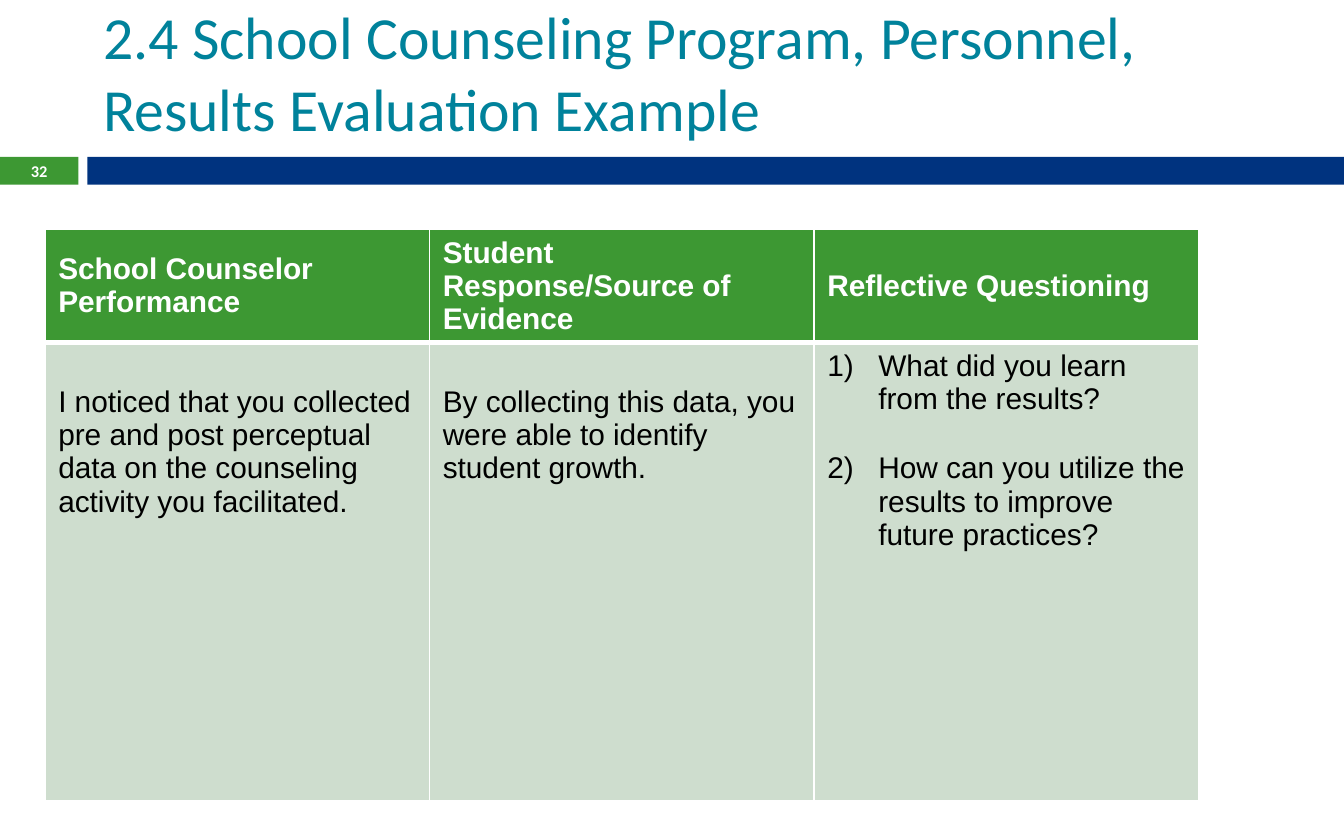
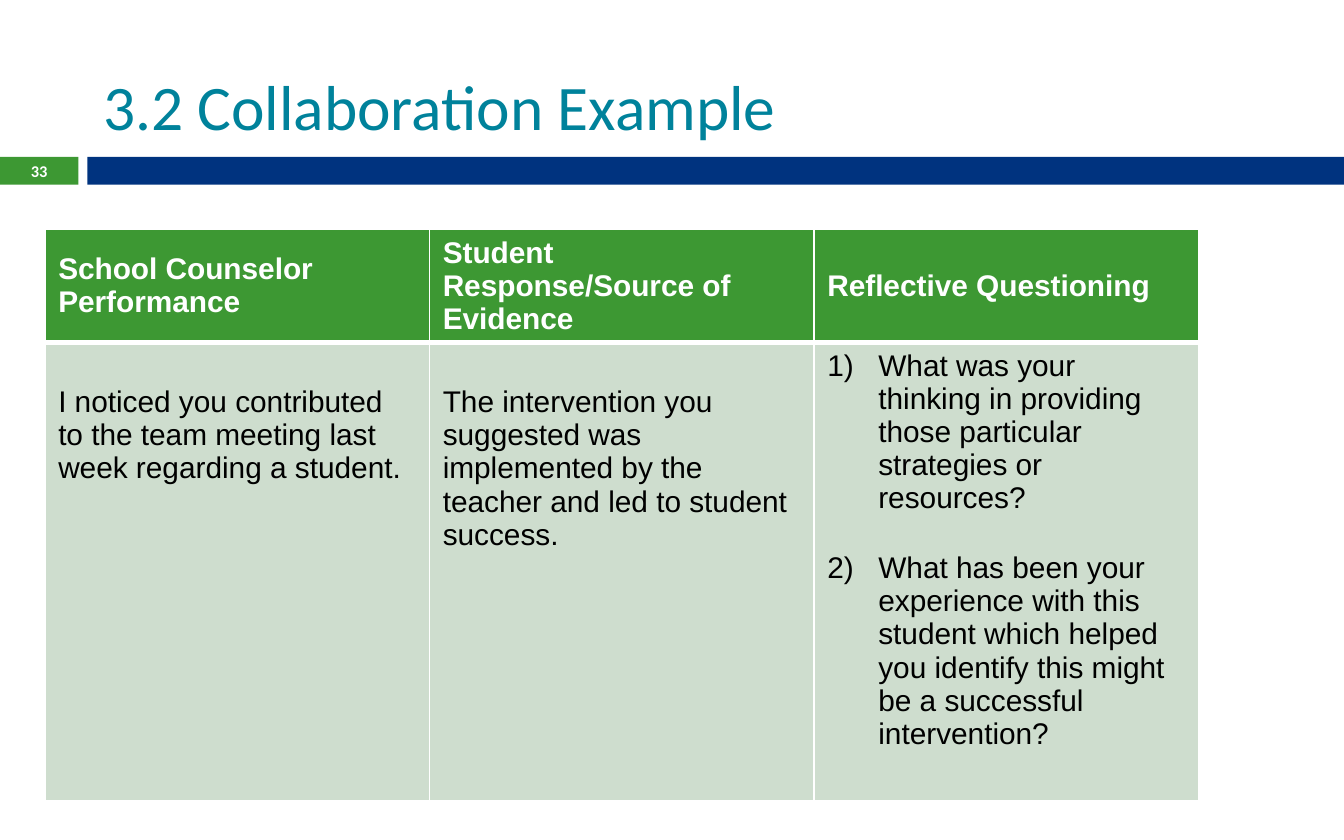
from dataclasses import dataclass
from typing import NamedTuple

from lxml import etree
from pptx import Presentation
from pptx.dml.color import RGBColor
from pptx.enum.shapes import MSO_SHAPE
from pptx.enum.text import MSO_ANCHOR, MSO_AUTO_SIZE, PP_ALIGN
from pptx.oxml.ns import qn
from pptx.util import Emu, Inches, Pt

RECT = MSO_SHAPE.RECTANGLE
LEFT, CENTER = PP_ALIGN.LEFT, PP_ALIGN.CENTER
TOP, MIDDLE, BOTTOM = MSO_ANCHOR.TOP, MSO_ANCHOR.MIDDLE, MSO_ANCHOR.BOTTOM
NO_FIT = MSO_AUTO_SIZE.NONE
TITLE_ONLY = 5

WIDTH, HEIGHT = Inches(10), Inches(6.25)
COLS, ROWS = 120, 75


@dataclass(frozen=True)
class Theme:
    green: str = "3D9833"
    navy: str = "00337F"
    teal: str = "00829B"
    pale: str = "CEDDCE"
    white: str = "FFFFFF"
    black: str = "000000"
    head: str = "Calibri"
    body: str = "Arial"
    cell: float = 16
    number: float = 8.8
    gap: float = 19.5
    thin: float = 1
    thick: float = 3


THEME = Theme()


class Box(NamedTuple):
    """A place on the grid, in columns and rows."""
    col: float
    row: float
    wide: float
    high: float

    def place(self) -> tuple[Emu, Emu, Emu, Emu]:
        return across(self.col), down(self.row), across(self.wide), down(self.high)


class Band(NamedTuple):
    box: Box
    fill: str


class Example(NamedTuple):
    number: int
    title: str
    size: float
    noticed: str
    evidence: str
    questions: tuple[str, ...]


TITLE = Box(8, 2.6, 107, 10.8)
TAB = Box(0, 14, 7, 2.6)
BANDS = (
    Band(Box(0, 14, 7, 2.5), THEME.green),
    Band(Box(7.8, 14, 112.2, 2.5), THEME.navy),
)
TABLE = Box(4, 20.5, 103, 47.9)
HEAD_ROW = 7
HEADS = (
    "School Counselor Performance",
    "Student Response/Source of Evidence",
    "Reflective Questioning",
)
EXAMPLES = (
    Example(
        32, "2.4 School Counseling Program, Personnel, Results Evaluation Example", 32,
        "I noticed that you collected pre and post perceptual data on the "
        "counseling activity you facilitated.",
        "By collecting this data, you were able to identify student growth.",
        ("What did you learn from the results?",
         "How can you utilize the results to improve future practices?"),
    ),
    Example(
        33, "3.2 Collaboration Example", 34,
        "I noticed you contributed to the team meeting last week regarding a student.",
        "The intervention you suggested was implemented by the teacher and led "
        "to student success.",
        ("What was your thinking in providing those particular strategies or resources?",
         "What has been your experience with this student which helped you "
         "identify this might be a successful intervention?"),
    ),
)


def across(cols: float) -> Emu:
    return Emu(round(WIDTH * cols / COLS))


def down(rows: float) -> Emu:
    return Emu(round(HEIGHT * rows / ROWS))


def style(para, face: str, size: float, color: str, bold: bool = False,
          align=LEFT) -> None:
    para.alignment = align
    font = para.font
    font.name, font.size, font.bold = face, Pt(size), bold
    font.color.rgb = RGBColor.from_string(color)


def add_band(slide, band: Band) -> None:
    shape = slide.shapes.add_shape(RECT, *band.box.place())
    shape.shadow.inherit = False
    shape.fill.solid()
    shape.fill.fore_color.rgb = RGBColor.from_string(band.fill)
    shape.line.fill.background()


def set_title(slide, text: str, size: float) -> None:
    title = slide.shapes.title
    title.left, title.top, title.width, title.height = TITLE.place()
    frame = title.text_frame
    frame.text = text
    frame.auto_size, frame.word_wrap = NO_FIT, True
    frame.vertical_anchor = BOTTOM
    style(frame.paragraphs[0], THEME.head, size, THEME.teal)


def add_number(slide, number: int) -> None:
    frame = slide.shapes.add_textbox(*TAB.place()).text_frame
    frame.word_wrap, frame.vertical_anchor = True, MIDDLE
    frame.margin_left = frame.margin_right = 0
    frame.margin_top = frame.margin_bottom = 0
    para = frame.paragraphs[0]
    para.text = str(number)
    style(para, THEME.head, THEME.number, THEME.white, True, CENTER)


def set_edges(cell, top: float, bottom: float) -> None:
    """Give the cell white borders; the sides are thin."""
    props = cell._tc.get_or_add_tcPr()
    edges = {"L": THEME.thin, "R": THEME.thin, "T": top, "B": bottom}
    for spot, (side, width) in enumerate(edges.items()):
        line = etree.Element(qn(f"a:ln{side}"), w=str(Pt(width)))
        fill = etree.SubElement(line, qn("a:solidFill"))
        etree.SubElement(fill, qn("a:srgbClr"), val=THEME.white)
        props.insert(spot, line)


def fill_cell(cell, texts: tuple[str, ...], head: bool) -> None:
    cell.fill.solid()
    cell.fill.fore_color.rgb = RGBColor.from_string(THEME.green if head else THEME.pale)
    cell.vertical_anchor = MIDDLE if head else TOP
    set_edges(cell, THEME.thin if head else THEME.thick,
              THEME.thick if head else THEME.thin)
    frame = cell.text_frame
    frame.text = "\n".join(texts)
    for para in frame.paragraphs:
        style(para, THEME.body, THEME.cell, THEME.white if head else THEME.black, head)


def number_list(frame) -> None:
    indent = Inches(0.38)
    for spot, para in enumerate(frame.paragraphs):
        if spot:
            para.space_before = Pt(THEME.gap)
        props = para._p.get_or_add_pPr()
        props.set("marL", str(indent))
        props.set("indent", str(-indent))
        mark = etree.Element(qn("a:buAutoNum"), type="arabicParenR")
        props.find(qn("a:defRPr")).addprevious(mark)


def add_grid(slide, example: Example) -> None:
    table = slide.shapes.add_table(2, len(HEADS), *TABLE.place()).table
    table.horz_banding = False
    table.rows[0].height = down(HEAD_ROW)
    table.rows[1].height = down(TABLE.high - HEAD_ROW)
    bodies = ((example.noticed,), (example.evidence,), example.questions)
    for col, (head, texts) in enumerate(zip(HEADS, bodies)):
        table.columns[col].width = across(TABLE.wide / len(HEADS))
        fill_cell(table.cell(0, col), (head,), True)
        cell = table.cell(1, col)
        fill_cell(cell, texts, False)
        if len(texts) > 1:
            number_list(cell.text_frame)
        else:
            cell.margin_top = Inches(0.05) + Pt(THEME.gap)


def main() -> None:
    deck = Presentation()
    deck.slide_width, deck.slide_height = WIDTH, HEIGHT
    for example in EXAMPLES:
        slide = deck.slides.add_slide(deck.slide_layouts[TITLE_ONLY])
        for band in BANDS:
            add_band(slide, band)
        set_title(slide, example.title, example.size)
        add_grid(slide, example)
        add_number(slide, example.number)
    deck.save("out.pptx")


if __name__ == "__main__":
    main()
